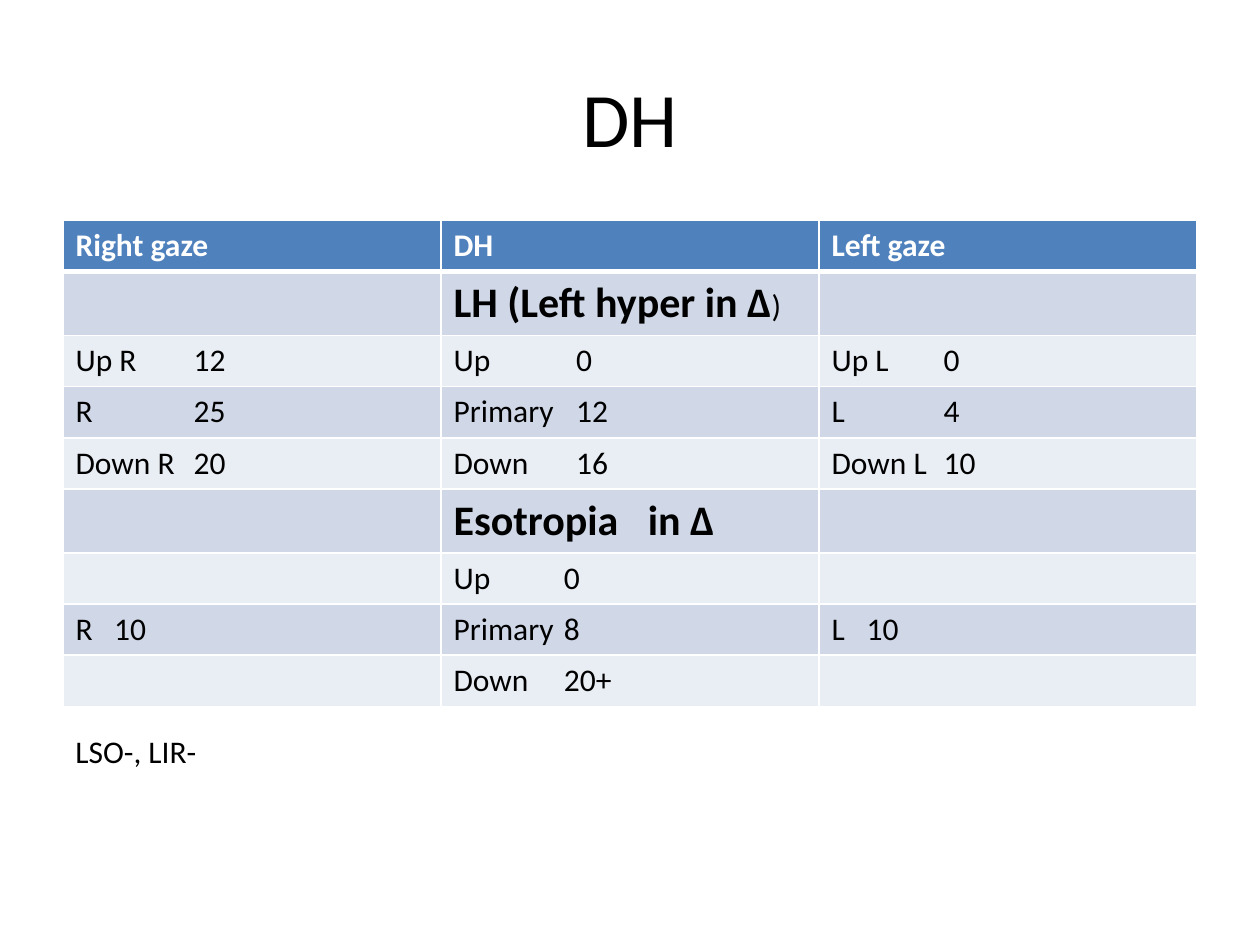
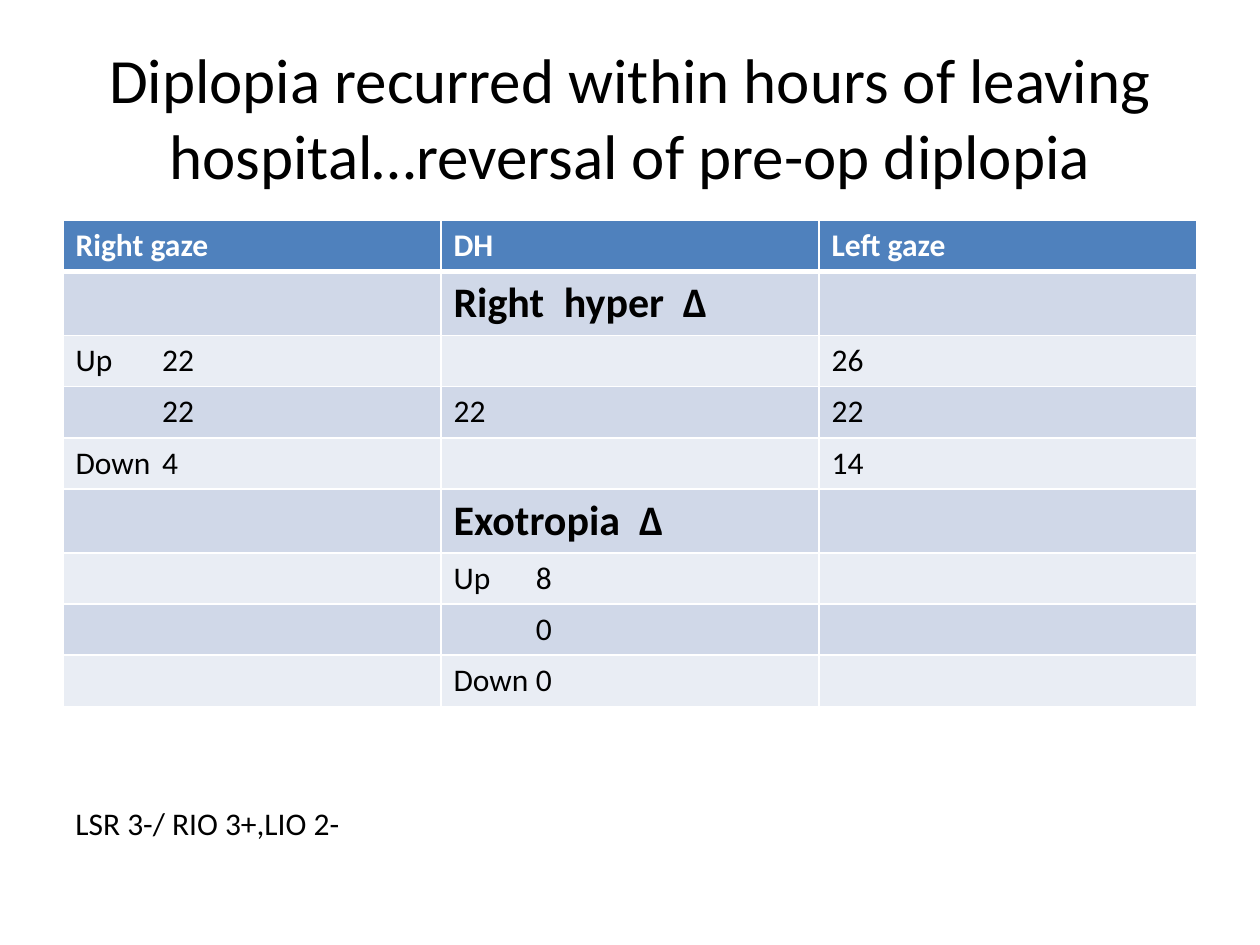
import pptx
import pptx.dml.color
import pptx.enum.text
import pptx.oxml
import pptx.oxml.ns
import pptx.util
from collections import namedtuple
from lxml import etree

Pt = pptx.util.Pt
FONT = "Calibri"
BLACK, WHITE = "000000", "FFFFFF"
HEADER_FILL, DARK_BAND, LIGHT_BAND = "4F81BD", "D0D8E8", "E9EDF4"
BODY_SIZE, HEADING_SIZE = 18, 24
LEFT, WIDTH = 36, 648
TITLE_TOP, TITLE_HEIGHT = 21.6, 90
TABLE_TOP, ROW_HEIGHT, HEADING_HEIGHT = 126, 29.25, 36.5
COLUMN_HEADS = ["Right gaze", "DH", "Left gaze"]

Section = namedtuple("Section", "heading heading_stops tail rows column_stops")


def color(hex_string):
    return pptx.dml.color.RGBColor.from_string(hex_string)


def style_font(font, size, hex_string=BLACK, bold=False):
    font.name = FONT
    font.size = Pt(size)
    font.bold = bold
    font.color.rgb = color(hex_string)


def add_tab_stops(paragraph, stops):
    properties = paragraph._p.get_or_add_pPr()
    tab_list = etree.SubElement(properties, pptx.oxml.ns.qn("a:tabLst"))
    for stop in stops:
        etree.SubElement(tab_list, pptx.oxml.ns.qn("a:tab"), pos=str(Pt(stop)), algn="l")


def set_border(cell, side, width):
    line = etree.SubElement(cell._tc.get_or_add_tcPr(), pptx.oxml.ns.qn(f"a:ln{side}"), w=str(Pt(width)))
    fill = etree.SubElement(line, pptx.oxml.ns.qn("a:solidFill"))
    etree.SubElement(fill, pptx.oxml.ns.qn("a:srgbClr"), val=WHITE)


def format_cell(cell, fill, top=1, bottom=1):
    for side, width in (("L", 1), ("R", 1), ("T", top), ("B", bottom)):
        set_border(cell, side, width)
    cell.fill.solid()
    cell.fill.fore_color.rgb = color(fill)


def write_cell(cell, text, stops=(), size=BODY_SIZE, hex_string=BLACK, bold=False):
    paragraph = cell.text_frame.paragraphs[0]
    if "\t" in text:
        add_tab_stops(paragraph, stops)
    style_font(paragraph.font, size, hex_string, bold)
    if text:
        paragraph.add_run().text = text
    return paragraph


def add_title(slide, text, size):
    title = slide.shapes.title
    title.left, title.top = Pt(LEFT), Pt(TITLE_TOP)
    title.width, title.height = Pt(WIDTH), Pt(TITLE_HEIGHT)
    title.text_frame.text = text
    title.text_frame.vertical_anchor = pptx.enum.text.MSO_ANCHOR.MIDDLE
    paragraph = title.text_frame.paragraphs[0]
    paragraph.alignment = pptx.enum.text.PP_ALIGN.CENTER
    style_font(paragraph.font, size)


def write_section(table, first_row, section):
    table.rows[first_row].height = Pt(HEADING_HEIGHT)
    paragraph = write_cell(table.cell(first_row, 1), section.heading,
                           section.heading_stops, HEADING_SIZE, bold=True)
    if section.tail:
        run = paragraph.add_run()
        run.text = section.tail
        style_font(run.font, BODY_SIZE)
    for row, texts in enumerate(section.rows, first_row + 1):
        for column, text in enumerate(texts):
            write_cell(table.cell(row, column), text, section.column_stops[column])


def add_gaze_table(slide, sections):
    row_count = 1 + sum(1 + len(section.rows) for section in sections)
    table = slide.shapes.add_table(row_count, len(COLUMN_HEADS), Pt(LEFT), Pt(TABLE_TOP),
                                   Pt(WIDTH), Pt(ROW_HEIGHT * row_count)).table
    for row in range(row_count):
        table.rows[row].height = Pt(ROW_HEIGHT)
        fill = HEADER_FILL if row == 0 else DARK_BAND if row % 2 else LIGHT_BAND
        for cell in table.rows[row].cells:
            format_cell(cell, fill, top=3 if row == 1 else 1, bottom=3 if row == 0 else 1)
    for column, text in enumerate(COLUMN_HEADS):
        write_cell(table.cell(0, column), text, hex_string=WHITE, bold=True)
    first_row = 1
    for section in sections:
        write_section(table, first_row, section)
        first_row += 1 + len(section.rows)


def add_note(slide, text, top, width):
    note = slide.shapes.add_textbox(Pt(LEFT), Pt(top), Pt(width), Pt(29))
    frame = note.text_frame
    frame.word_wrap = False
    frame.auto_size = pptx.enum.text.MSO_AUTO_SIZE.SHAPE_TO_FIT_TEXT
    frame.text = text
    style_font(frame.paragraphs[0].font, BODY_SIZE)


def add_gaze_slide(presentation, title, title_size, sections, note, note_top, note_width):
    slide = presentation.slides.add_slide(presentation.slide_layouts[5])
    add_title(slide, title, title_size)
    add_gaze_table(slide, sections)
    add_note(slide, note, note_top, note_width)


def main():
    presentation = pptx.Presentation()
    presentation.slide_width, presentation.slide_height = Pt(720), Pt(540)

    left_hyper = Section("LH (Left hyper in Δ", [], ")", [
        ["Up R\t12", "Up\t0", "Up L\t0"],
        ["R\t25", "Primary\t12", "L\t4"],
        ["Down R\t20", "Down\t16", "Down L\t10"],
    ], [[67.5], [70], [64]])
    esotropia = Section("Esotropia\tin Δ", [111], "", [
        ["", "Up\t0", ""],
        ["R\t10", "Primary\t8", "L\t10"],
        ["", "Down\t20+", ""],
    ], [[22], [63], [20]])
    add_gaze_slide(presentation, "DH", 44, [left_hyper, esotropia], "LSO-, LIR-", 415, 84)

    right_hyper = Section("Right\thyper\tΔ", [63, 131], "", [
        ["Up\t22", "", "26"],
        ["\t22", "22", "22"],
        ["Down\t4", "", "14"],
    ], [[49.5], [], []])
    exotropia = Section("Exotropia\tΔ", [106], "", [
        ["", "Up\t8", ""],
        ["", "\t0", ""],
        ["", "Down\t0", ""],
    ], [[], [47], []])
    add_gaze_slide(presentation,
                   "Diplopia recurred within hours of leaving hospital…reversal of pre-op diplopia",
                   36, [right_hyper, exotropia], "LSR 3-/ RIO 3+,LIO 2-", 456, 167)

    presentation.save("out.pptx")


if __name__ == "__main__":
    main()
